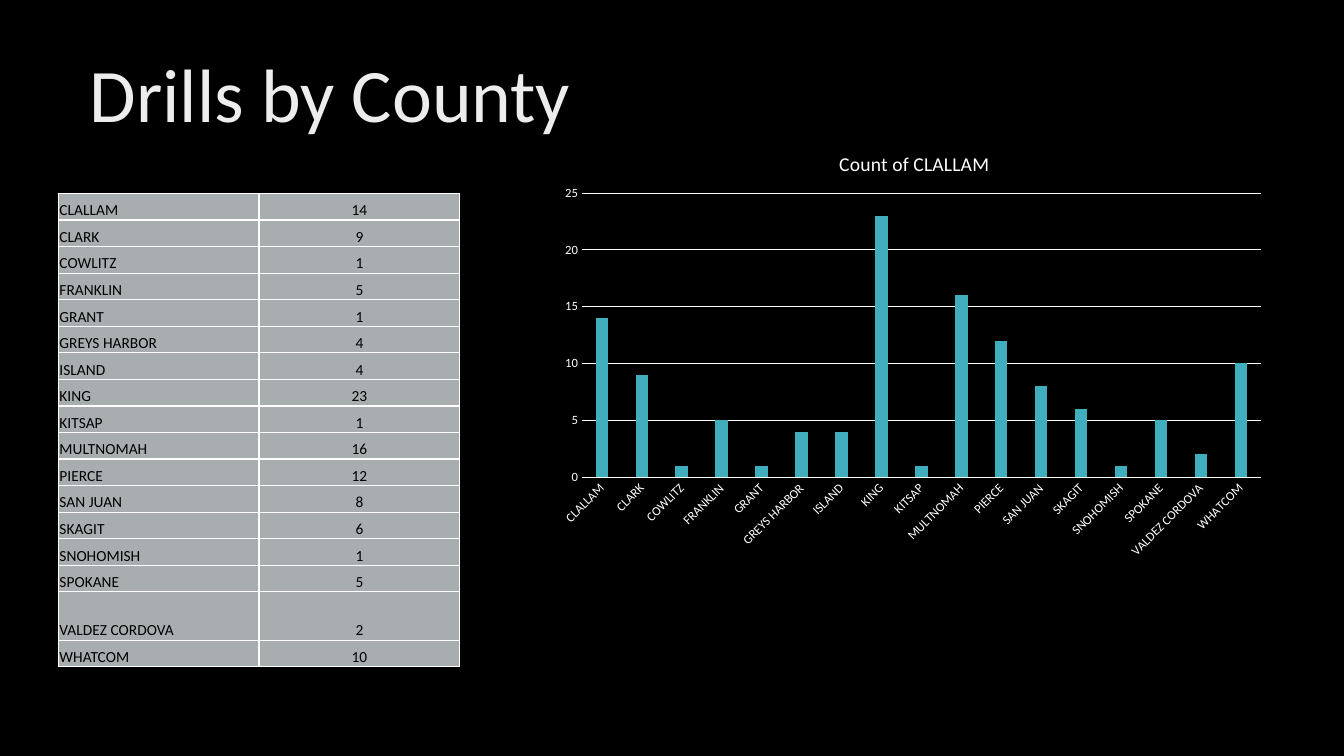
from dataclasses import dataclass

from pptx import Presentation
from pptx import util as u
from pptx.chart.data import CategoryChartData
from pptx.dml.color import RGBColor
from pptx.enum import chart as charts, text
from pptx.oxml import parse_xml
from pptx.oxml.ns import nsdecls, qn

HEADING = "Drills by County"
CHART_HEADING = "Count of CLALLAM"
DRILLS = {
    "CLALLAM": 14, "CLARK": 9, "COWLITZ": 1, "FRANKLIN": 5, "GRANT": 1,
    "GREYS HARBOR": 4, "ISLAND": 4, "KING": 23, "KITSAP": 1,
    "MULTNOMAH": 16, "PIERCE": 12, "SAN JUAN": 8, "SKAGIT": 6,
    "SNOHOMISH": 1, "SPOKANE": 5, "VALDEZ CORDOVA": 2, "WHATCOM": 10,
}
TALL_COUNTY = "VALDEZ CORDOVA"
TALL_ROW = 0.48
HEADING_BOX = (0.79, 0.25, 11.5, 1.45)
CHART_BOX = (5.44, 1.26, 7.21, 4.37)
TABLE_BOX = (0.58, 1.92, 3.98, 4.7)
PLOT_SHARE = {"x": 0.046, "y": 0.15, "w": 0.934, "h": 0.645}
CHART_HEADING_SHARE = {"x": 0.395, "y": 0.045}


@dataclass(frozen=True)
class Theme:
    face: str = "Calibri"
    back: str = "000000"
    light: str = "FFFFFF"
    bar: str = "41AEBD"
    cell: str = "E9F2F4"
    cell_alpha: int = 72
    heading_stops: tuple = ((0, "BFBFBF"), (28, "EDEDED"), (100, "FFFFFF"))
    heading_angle: int = 80
    heading_size: float = 54
    chart_heading_size: float = 14
    axis_size: float = 9
    cell_size: float = 11
    rule: float = 0.75
    border: float = 1


THEME = Theme()


def rgb(value):
    return RGBColor.from_string(value)


def inches(box):
    return [u.Inches(length) for length in box]


def style(font, size, color=None):
    font.name, font.size = THEME.face, u.Pt(size)
    font.bold = False
    if color:
        font.color.rgb = rgb(color)


def add_heading(slide):
    heading = slide.shapes.title
    heading.left, heading.top, heading.width, heading.height = inches(HEADING_BOX)
    frame = heading.text_frame
    frame.word_wrap = True
    frame.vertical_anchor = text.MSO_ANCHOR.MIDDLE
    line = frame.paragraphs[0]
    line.alignment = text.PP_ALIGN.LEFT
    line.line_spacing = 0.9
    run = line.add_run()
    run.text = HEADING
    style(run.font, THEME.heading_size)
    stops = "".join(
        f'<a:gs pos="{share * 1000}"><a:srgbClr val="{color}"/></a:gs>'
        for share, color in THEME.heading_stops)
    run.font._element.insert(0, parse_xml(
        f'<a:gradFill {nsdecls("a")}><a:gsLst>{stops}</a:gsLst>'
        f'<a:lin ang="{THEME.heading_angle * 60000}" scaled="0"/></a:gradFill>'))


def fill_cell(cell, words, alignment):
    cell.margin_left = cell.margin_right = cell.margin_top = u.Inches(0.01)
    cell.margin_bottom = 0
    cell.vertical_anchor = text.MSO_ANCHOR.BOTTOM
    line = cell.text_frame.paragraphs[0]
    line.alignment = alignment
    run = line.add_run()
    run.text = words
    style(run.font, THEME.cell_size, THEME.back)
    cell.fill.solid()
    cell.fill.fore_color.rgb = rgb(THEME.cell)
    props = cell._tc.get_or_add_tcPr()
    tint = props.find(qn("a:solidFill")).find(qn("a:srgbClr"))
    tint.append(parse_xml(
        f'<a:alpha {nsdecls("a")} val="{THEME.cell_alpha * 1000}"/>'))
    for place, side in enumerate(("lnL", "lnR", "lnT", "lnB")):
        props.insert(place, parse_xml(
            f'<a:{side} {nsdecls("a")} w="{u.Pt(THEME.border)}"><a:solidFill>'
            f'<a:srgbClr val="{THEME.light}"/></a:solidFill></a:{side}>'))


def add_county_table(slide):
    counties = slide.shapes.add_table(len(DRILLS), 2, *inches(TABLE_BOX)).table
    counties.first_row = counties.horz_banding = False
    usual_row = (TABLE_BOX[3] - TALL_ROW) / (len(DRILLS) - 1)
    for index, (county, count) in enumerate(DRILLS.items()):
        height = TALL_ROW if county == TALL_COUNTY else usual_row
        counties.rows[index].height = u.Inches(height)
        fill_cell(counties.cell(index, 0), county, text.PP_ALIGN.LEFT)
        fill_cell(counties.cell(index, 1), str(count), text.PP_ALIGN.CENTER)


def place(element, shares, inner=False):
    for old in element.findall(qn("c:layout")):
        element.remove(old)
    target = '<c:layoutTarget val="inner"/>' if inner else ""
    modes = "".join(f'<c:{key}Mode val="edge"/>' for key in "xy")
    sizes = "".join(f'<c:{key} val="{share}"/>' for key, share in shares.items())
    layout = parse_xml(
        f'<c:layout {nsdecls("c")}><c:manualLayout>{target}{modes}{sizes}'
        '</c:manualLayout></c:layout>')
    element.insert(0 if inner else 1, layout)


def rule_line(line):
    line.color.rgb = rgb(THEME.light)
    line.width = u.Pt(THEME.rule)


def add_county_chart(slide):
    data = CategoryChartData()
    data.categories = list(DRILLS)
    data.add_series("Series 1", list(DRILLS.values()))
    chart = slide.shapes.add_chart(
        charts.XL_CHART_TYPE.COLUMN_CLUSTERED, *inches(CHART_BOX), data).chart
    style(chart.font, 10, THEME.light)
    chart.has_legend = False
    chart.has_title = True
    run = chart.chart_title.text_frame.paragraphs[0].add_run()
    run.text = CHART_HEADING
    style(run.font, THEME.chart_heading_size, THEME.light)
    place(chart.chart_title._element, CHART_HEADING_SHARE)

    bars = chart.plots[0]
    bars.gap_width, bars.overlap = 219, -27
    bars.vary_by_categories = False
    bars.series[0].format.fill.solid()
    bars.series[0].format.fill.fore_color.rgb = rgb(THEME.bar)

    names, counts = chart.category_axis, chart.value_axis
    for axis in (names, counts):
        axis.major_tick_mark = axis.minor_tick_mark = charts.XL_TICK_MARK.NONE
        style(axis.tick_labels.font, THEME.axis_size, THEME.light)
    rule_line(names.format.line)
    names._element.find(qn("c:txPr")).find(qn("a:bodyPr")).set("rot", "-2700000")
    counts.format.line.fill.background()
    counts.minimum_scale, counts.maximum_scale, counts.major_unit = 0, 25, 5
    counts.has_major_gridlines = True
    rule_line(counts.major_gridlines.format.line)
    place(bars._element.getparent(), PLOT_SHARE, inner=True)


def main():
    deck = Presentation()
    deck.slide_width, deck.slide_height = inches((13.33, 7.5))
    slide = deck.slides.add_slide(deck.slide_layouts[5])
    slide.background.fill.solid()
    slide.background.fill.fore_color.rgb = rgb(THEME.back)
    add_heading(slide)
    add_county_chart(slide)
    add_county_table(slide)
    deck.save("out.pptx")


if __name__ == "__main__":
    main()
